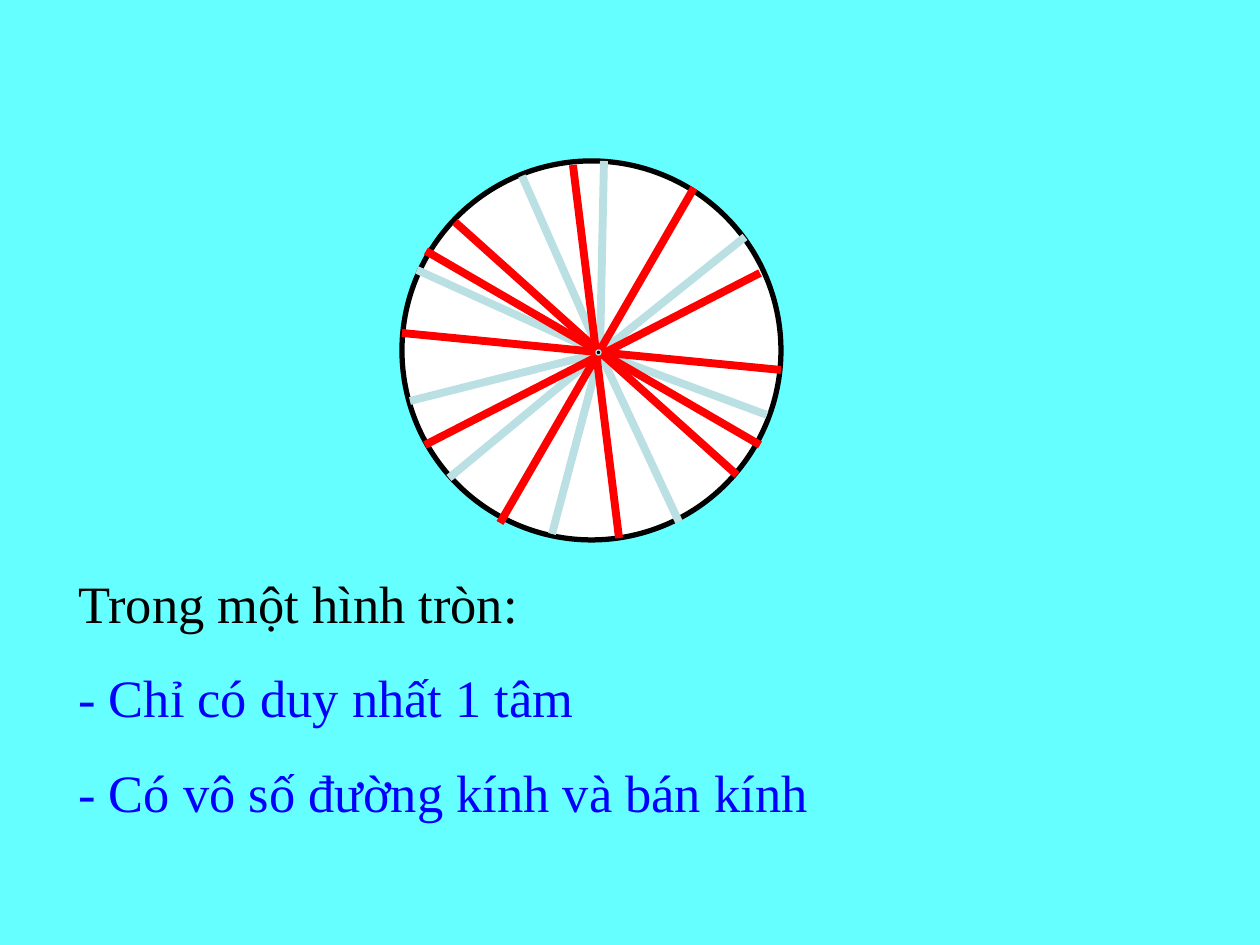
from dataclasses import dataclass

from pptx import Presentation
from pptx import util as u
from pptx.dml.color import RGBColor
from pptx.enum import shapes, text
from pptx.oxml.ns import qn
from lxml import etree

PX = u.Inches(1) // 126  # one px in EMU


@dataclass(frozen=True)
class Theme:
    background: str = "66FFFF"
    disc: str = "FFFFFF"
    ink: str = "000000"
    radius: str = "BBE0E3"
    diameter: str = "FF0000"
    point: str = "0000FF"
    font: str = "Times New Roman"
    size: int = 30
    outline: float = 3
    spoke: float = 4.5
    hairline: float = 0.75


T = Theme()

# Ends of the spokes, in px from the corner of the circle's box
CENTRE = (198, 192)
RADII = [(343, 76), (365, 254), (202, 0), (120, 15), (8, 240),
         (277, 361), (150, 373), (15, 109), (47, 317)]
DIAMETERS = [((53, 61), (335, 314)), ((23, 284), (358, 112)),
             ((379, 209), (0, 172)), ((98, 362), (292, 27)),
             ((217, 377), (171, 4)), ((358, 284), (24, 90))]


def rgb(color):
    return RGBColor.from_string(color)


def px(*values):
    return [u.Emu(v * PX) for v in values]


def add_ellipse(s, box, fill, line, width):
    sp = s.shapes.add_shape(shapes.MSO_SHAPE.OVAL, *px(*box))
    sp.shadow.inherit = False
    sp.fill.solid()
    sp.fill.fore_color.rgb = rgb(fill)
    sp.line.color.rgb = rgb(line)
    sp.line.width = u.Pt(width)


def add_line(s, start, end, color, width):
    ln = s.shapes.add_connector(shapes.MSO_CONNECTOR.STRAIGHT, *px(*start, *end))
    ln.line.color.rgb = rgb(color)
    ln.line.width = u.Pt(width)
    etree.SubElement(ln._element.spPr, qn("a:effectLst"))


def add_text(tf, words, first=False, color=T.ink, size=T.size, spacing=1.5):
    p = tf.paragraphs[0] if first else tf.add_paragraph()
    p.line_spacing = spacing
    r = p.add_run()
    r.text = words
    r.font.name = T.font
    r.font.size = u.Pt(size)
    r.font.color.rgb = rgb(color)


def draw_circle(s, x, y, side):
    """Circle with its radii, diameters and centre."""
    def at(point):
        return x + point[0], y + point[1]

    add_ellipse(s, (x, y, side, side), T.disc, T.ink, T.outline)
    for end in RADII:
        add_line(s, at(CENTRE), at(end), T.radius, T.spoke)
    for start, end in DIAMETERS:
        add_line(s, at(start), at(end), T.diameter, T.spoke)
    # Centre point
    add_ellipse(s, (*at((194, 189)), 5, 5), T.ink, T.radius, T.hairline)


def draw_conclusion(s, x, y, w, h):
    """Heading line followed by the two facts."""
    tf = s.shapes.add_textbox(*px(x, y, w, h)).text_frame
    tf.word_wrap = True
    tf.auto_size = text.MSO_AUTO_SIZE.SHAPE_TO_FIT_TEXT
    add_text(tf, "Trong một hình tròn:", first=True)
    for fact in ("- Chỉ có duy nhất 1 tâm", "- Có vô số đường kính và bán kính"):
        add_text(tf, fact, color=T.point)


def main():
    prs = Presentation()
    prs.slide_width, prs.slide_height = px(1260, 945)
    s = prs.slides.add_slide(prs.slide_layouts[6])
    s.background.fill.solid()
    s.background.fill.fore_color.rgb = rgb(T.background)
    draw_circle(s, 402, 161, 379)
    draw_conclusion(s, 66, 533, 973, 299)
    prs.save("out.pptx")


if __name__ == "__main__":
    main()
